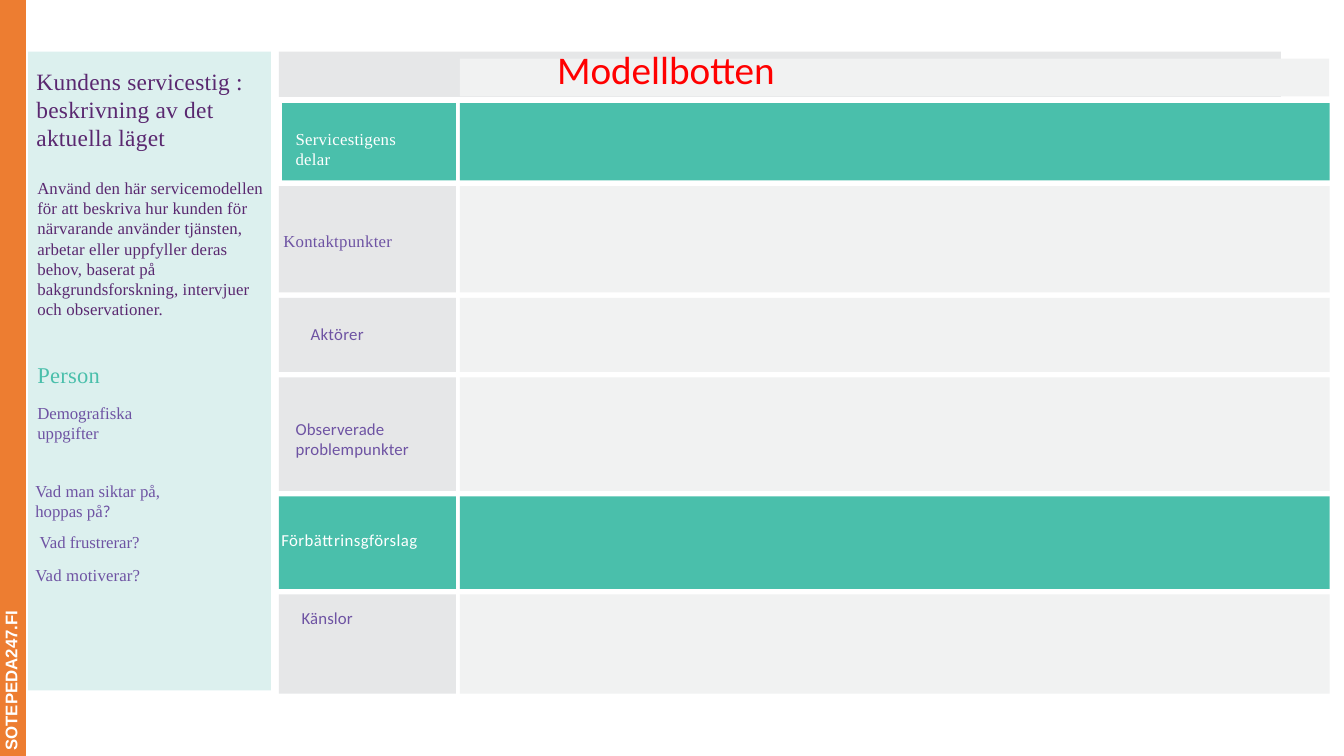
from pptx import Presentation
from pptx.dml.color import RGBColor
from pptx.enum.shapes import MSO_SHAPE
from pptx.enum.text import MSO_ANCHOR, PP_ALIGN
from pptx.util import Cm, Pt

RECTANGLE = MSO_SHAPE.RECTANGLE
TOP, MIDDLE, BOTTOM = MSO_ANCHOR.TOP, MSO_ANCHOR.MIDDLE, MSO_ANCHOR.BOTTOM
LEFT = PP_ALIGN.LEFT

COLORS = {
    "orange": "ED7D31", "mint": "DCF0EE", "teal": "4ABFAB", "grey": "E6E7E8",
    "pale": "F1F2F2", "plum": "5A2870", "violet": "6E53A3", "white": "FFFFFF",
    "red": "FF0000",
}
SERIF, SANS = "Times New Roman", "Calibri"

# Text style: font, size, colour, letter spacing in points
HEADING = (SERIF, 16.7, "plum", 0.2)
INTRO = (SERIF, 12, "plum", 0.1)
PERSON = (SERIF, 16.1, "teal", 0.2)
QUESTION = (SERIF, 12, "violet", 0)
QUESTION_MARK = (SANS, 12, "violet", 0)
MOTIVE = (SERIF, 12, "violet", 0.1)
TITLE = (SANS, 28, "red", 0)
SITE = ("Arial", 12, "white", 0)

# Left, top, width, height in cm; then paragraphs, each a list of (text, style)
PANEL_TEXTS = [
    ((0.89, 1.68, 5.28, 2.13),
     [[("Kundens servicestig :\vbeskrivning av det aktuella läget", HEADING)]]),
    ((0.91, 4.45, 5.92, 3.61),
     [[("Använd den här servicemodellen för att beskriva hur kunden för närvarande "
        "använder tjänsten, arbetar eller uppfyller deras behov, baserat på "
        "bakgrundsforskning, intervjuer och observationer.", INTRO)]]),
    ((0.91, 9.07, 3.96, 2.08),
     [[("Person", PERSON)], [("Demografiska uppgifter", QUESTION)]]),
    ((0.86, 12.09, 4.42, 1.04),
     [[("Vad man siktar på, hoppas på", QUESTION), ("?", QUESTION_MARK)]]),
    ((0.97, 13.36, 3.94, 0.53), [[("Vad frustrerar?", QUESTION)]]),
    ((0.86, 14.2, 4.67, 0.53), [[("Vad motiverar?", MOTIVE)]]),
]

# Row height, label, label style, label box (left, offset from row top, width, height)
ROWS = [
    (1.95, "Servicestigens delar", (SERIF, 12, "white", 0.2), (7.42, 0.62, 3.48, 1.04)),
    (2.68, "Kontaktpunkter", (SERIF, 12, "violet", 0.2), (7.11, 1.1, 4.14, 0.53)),
    (1.86, "Aktörer", (SANS, 12, "violet", 0.2), (7.8, 0.62, 2.51, 0.53)),
    (2.86, "Observerade problempunkter", (SANS, 12, "violet", 0.1), (7.42, 1.01, 3.84, 1.04)),
    (2.33, "Förbättrinsgförslag", (SANS, 12, "white", 0.3), (7.06, 0.8, 4.75, 0.53)),
    (2.5, "Känslor", (SANS, 12, "violet", 0.1), (7.57, 0.31, 3.53, 0.53)),
]
FIRST_ROW_TOP, ROW_GAP = 2.6, 0.14
LABEL_LEFT, LABEL_RIGHT = 7.03, 11.49
FIRST_LABEL_LEFT = 7.11
CELL_LEFT, CELL_WIDTH = 11.59, 21.92

SIDE_STRIP = (-9.25, 9.14, 19.05, 0.76)
PANEL = (0.71, 1.3, 6.12, 16.1)
HEADER_BAR = (7.03, 1.3, 25.25, 1.14)
HEADER_CELL = (11.59, 1.48, 21.91, 0.95)
TITLE_BOX = (13.79, 0.89, 6.07, 1.7)


def add_block(box, color):
    block = slide.shapes.add_shape(RECTANGLE, *map(Cm, box))
    block.shadow.inherit = False
    block.fill.solid()
    block.fill.fore_color.rgb = RGBColor.from_string(COLORS[color])
    block.line.fill.background()
    return block


def style_font(font, style, bold=None):
    name, size, color, spacing = style
    for key, value in {"name": name, "size": Pt(size), "bold": bold}.items():
        setattr(font, key, value)
    font.color.rgb = RGBColor.from_string(COLORS[color])
    if spacing:
        font._element.set("spc", str(round(spacing * 100)))


def write(shape, paragraphs, insets, anchor=TOP, wrap=True, bold=None):
    """Fill a shape with styled runs; insets are left, top, right, bottom in cm."""
    frame = shape.text_frame
    left, top, right, bottom = map(Cm, insets)
    layout = {"word_wrap": wrap, "vertical_anchor": anchor, "margin_left": left,
              "margin_top": top, "margin_right": right, "margin_bottom": bottom}
    for key, value in layout.items():
        setattr(frame, key, value)
    for index, runs in enumerate(paragraphs):
        paragraph = frame.add_paragraph() if index else frame.paragraphs[0]
        paragraph.alignment = LEFT
        if index:
            paragraph.space_before = Pt(10.2)
        for text, style in runs:
            for number, line in enumerate(text.split("\v")):
                if number:
                    paragraph.add_line_break()
                run = paragraph.add_run()
                run.text = line
                style_font(run.font, style, bold)


def add_text(box, paragraphs, insets=(0.03, 0.03, 0, 0), **layout):
    write(slide.shapes.add_textbox(*map(Cm, box)), paragraphs, insets, **layout)


prs = Presentation()
prs.slide_width, prs.slide_height = Cm(33.87), Cm(19.05)
slide = prs.slides.add_slide(prs.slide_layouts[6])

strip = add_block(SIDE_STRIP, "orange")
strip.rotation = 270
write(strip, [[("SOTEPEDA247.FI", SITE)]], (0.13,) * 4, anchor=BOTTOM, bold=True)

add_block(PANEL, "mint")
for box, paragraphs in PANEL_TEXTS:
    is_heading = paragraphs[0][0][1] == HEADING
    add_text(box, paragraphs, anchor=MIDDLE if is_heading else TOP)

add_block(HEADER_BAR, "grey")
add_block(HEADER_CELL, "pale")

row_top = FIRST_ROW_TOP
for row, (height, label, style, (left, offset, width, text_height)) in enumerate(ROWS):
    highlighted = style[2] == "white"
    label_left = LABEL_LEFT if row else FIRST_LABEL_LEFT
    add_block((label_left, row_top, LABEL_RIGHT - label_left, height),
              "teal" if highlighted else "grey")
    add_block((CELL_LEFT, row_top, CELL_WIDTH, height),
              "teal" if highlighted else "pale")
    add_text((left, row_top + offset, width, text_height), [[(label, style)]])
    row_top += height + ROW_GAP

add_text(TITLE_BOX, [[("Modellbotten", TITLE)]], (0.25,) * 4, wrap=False)

prs.save("out.pptx")
